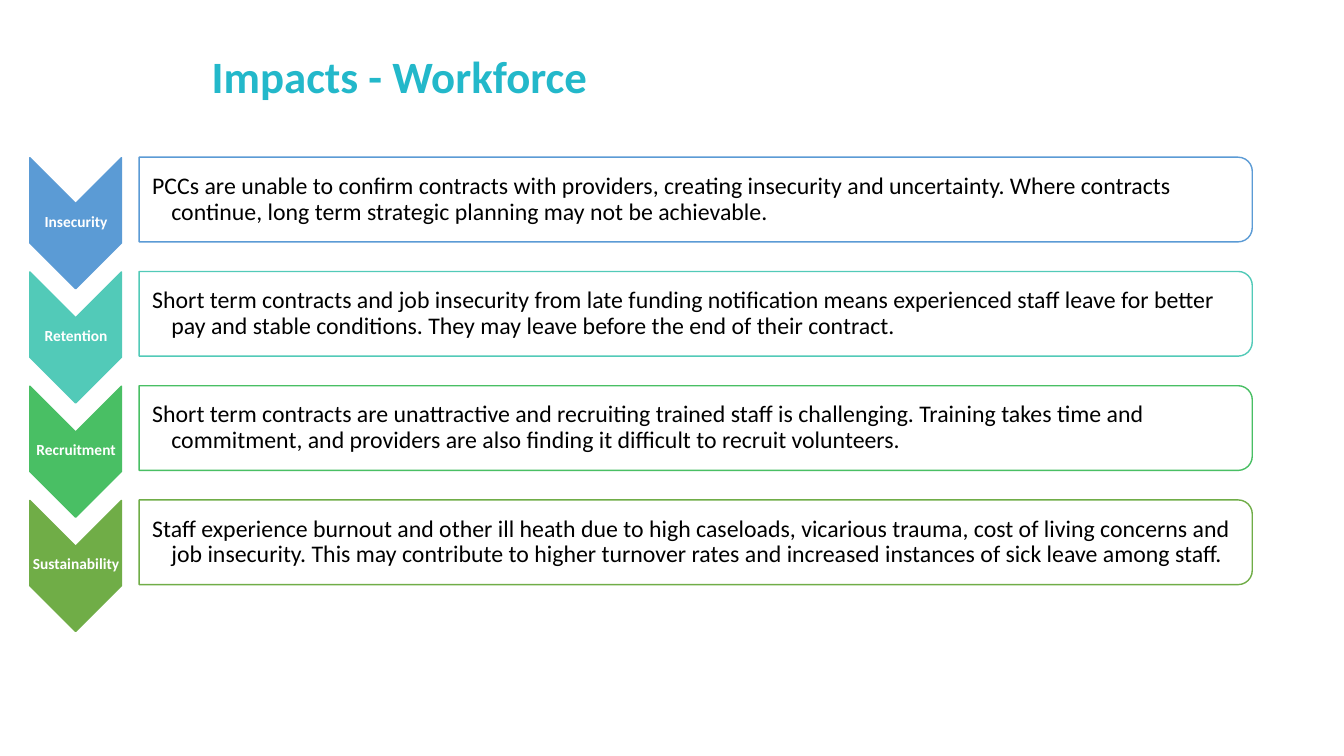
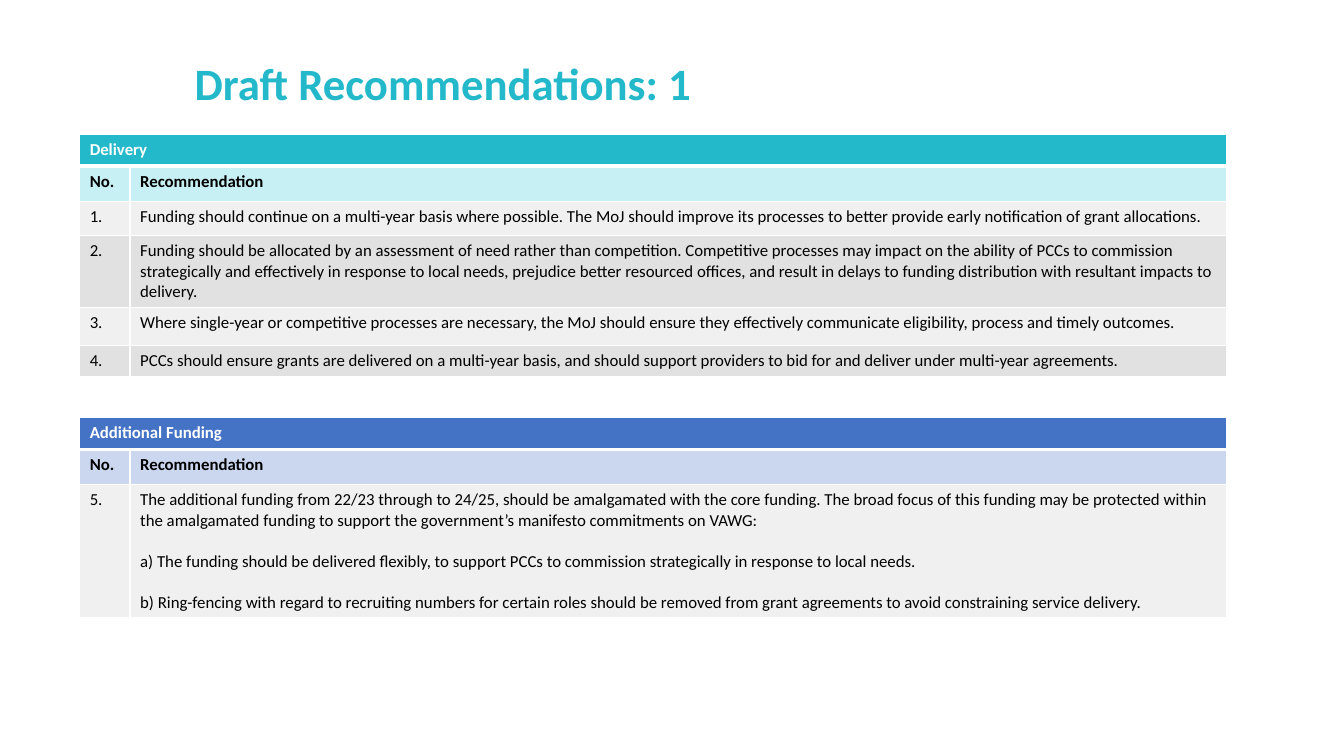
from lxml.etree import SubElement
from pptx import Presentation
from pptx.dml.color import RGBColor
from pptx.enum.shapes import MSO_SHAPE as SHAPE
from pptx.enum.text import MSO_ANCHOR as ANCHOR, PP_ALIGN as ALIGN
from pptx.oxml.ns import qn
from pptx.util import Inches, Pt

COLORS = {
    "teal": "23B8CA", "pale_teal": "C7F0F5",
    "blue": "4472C4", "pale_blue": "CAD7EE",
    "light_gray": "F0F0F0", "gray": "E1E1E1",
    "white": "FFFFFF", "black": "000000",
    "sky": "5B9BD5", "aqua": "52CAB8", "green": "49BF64", "olive": "70AD47",
}
IMPACTS = [
    ("Insecurity", "sky", "PCCs are unable to confirm contracts with providers, creating insecurity and uncertainty. Where contracts continue, long term strategic planning may not be achievable."),
    ("Retention", "aqua", "Short term contracts and job insecurity from late funding notification means experienced staff leave for better pay and stable conditions. They may leave before the end of their contract."),
    ("Recruitment", "green", "Short term contracts are unattractive and recruiting trained staff is challenging. Training takes time and commitment, and providers are also finding it difficult to recruit volunteers."),
    ("Sustainability", "olive", "Staff experience burnout and other ill heath due to high caseloads, vicarious trauma, cost of living concerns and job insecurity. This may contribute to higher turnover rates and increased instances of sick leave among staff."),
]
TABLES = [
    ("Delivery", 1.33, "teal", "pale_teal", [0.32, 0.35, 0.34, 0.71, 0.38, 0.3], [
        ("1.", "Funding should continue on a multi-year basis where possible. The MoJ should improve its processes to better provide early notification of grant allocations."),
        ("2.", "Funding should be allocated by an assessment of need rather than competition. Competitive processes may impact on the ability of PCCs to commission strategically and effectively in response to local needs, prejudice better resourced offices, and result in delays to funding distribution with resultant impacts to delivery."),
        ("3.", "Where single-year or competitive processes are necessary, the MoJ should ensure they effectively communicate eligibility, process and timely outcomes."),
        ("4.", "PCCs should ensure grants are delivered on a multi-year basis, and should support providers to bid for and deliver under multi-year agreements."),
    ]),
    ("Additional Funding", 4.14, "blue", "pale_blue", [0.32, 0.35, 1.3], [
        ("5.", "The additional funding from 22/23 through to 24/25, should be amalgamated with the core funding. The broad focus of this funding may be protected within the amalgamated funding to support the government’s manifesto commitments on VAWG:\n"
               "a) The funding should be delivered flexibly, to support PCCs to commission strategically in response to local needs.\n"
               "b) Ring-fencing with regard to recruiting numbers for certain roles should be removed from grant agreements to avoid constraining service delivery."),
    ]),
]


def color(name):
    return RGBColor.from_string(COLORS[name])


def style(paragraph, size, color_name, bold=False):
    paragraph.font.name = "Calibri"
    paragraph.font.size = Pt(size)
    paragraph.font.bold = bold
    paragraph.font.color.rgb = color(color_name)


presentation = Presentation()
presentation.slide_width = Inches(13.33)
presentation.slide_height = Inches(7.5)
slides = []
for text, left, top in [("Impacts - Workforce", 2, 0.32), ("Draft Recommendations: 1", 1.83, 0.39)]:
    slide = presentation.slides.add_slide(presentation.slide_layouts[5])
    title = slide.shapes.title
    title.left, title.top, title.width, title.height = map(Inches, (left, top, 11.5, 0.92))
    title.text_frame.text = text
    title.text_frame.vertical_anchor = ANCHOR.MIDDLE
    paragraph = title.text_frame.paragraphs[0]
    paragraph.alignment = ALIGN.LEFT
    paragraph.line_spacing = 0.9
    style(paragraph, 32, "teal", True)
    slides.append(slide)
impact_slide, recommendation_slide = slides

pitch = 3.4 / 3
for index, (label, accent, description) in enumerate(IMPACTS):
    offset = index * pitch
    for kind, left, top, width, height, fill in [
        (SHAPE.CHEVRON, 0.1, 1.76, 1.3, 0.91, accent),
        (SHAPE.ROUND_2_SAME_RECTANGLE, 6.48, -3.54, 0.84, 11.04, "white"),
    ]:
        shape = impact_slide.shapes.add_shape(kind, *map(Inches, (left, top + offset, width, height)))
        shape.rotation = 90
        shape.shadow.inherit = False
        shape.fill.solid()
        shape.fill.fore_color.rgb = color(fill)
        shape.line.color.rgb = color(accent)
        shape.line.width = Pt(1)

    for text, left, top, width, height, inset, size, text_color in [
        (label, 0.3, 2.01, 0.91, 0.39, 0.01, 11, "white"),
        (description, 1.38, 1.6, 11, 0.76, 0.13, 17, "black"),
    ]:
        box = impact_slide.shapes.add_textbox(*map(Inches, (left, top + offset, width, height)))
        frame = box.text_frame
        frame.word_wrap = True
        frame.vertical_anchor = ANCHOR.MIDDLE
        frame.margin_left = Inches(inset)
        frame.margin_top = frame.margin_right = frame.margin_bottom = Inches(0.01)
        frame.text = text
        paragraph = frame.paragraphs[0]
        paragraph.line_spacing = 0.9
        if text == label:
            paragraph.alignment = ALIGN.CENTER
        else:
            properties = paragraph._p.get_or_add_pPr()
            properties.set("marL", str(Inches(0.19)))
            properties.set("indent", str(-Inches(0.19)))
        style(paragraph, size, text_color, text == label)

for heading, top, head_fill, subhead_fill, heights, recommendations in TABLES:
    rows = [(heading, ""), ("No.", "Recommendation")] + recommendations
    frame = recommendation_slide.shapes.add_table(
        len(rows), 2, *map(Inches, (0.79, top, 11.38, sum(heights))))
    table = frame.table
    table.first_row = table.horz_banding = False
    table.columns[0].width = Inches(0.5)
    table.columns[1].width = Inches(10.88)
    table.cell(0, 0).merge(table.cell(0, 1))
    fills = [head_fill, subhead_fill] + ["light_gray", "gray"] * 2
    for row, texts in enumerate(rows):
        table.rows[row].height = Inches(heights[row])
        for column, text in enumerate(texts):
            cell = table.cell(row, column)
            properties = cell._tc.get_or_add_tcPr()
            for side in ("L", "R", "T", "B"):
                thick = (row, side) in [(0, "B"), (1, "T")]
                border = SubElement(properties, qn(f"a:ln{side}"), w=str(Pt(3 if thick else 1)))
                SubElement(SubElement(border, qn("a:solidFill")), qn("a:srgbClr"), val=COLORS["white"])
            cell.fill.solid()
            cell.fill.fore_color.rgb = color(fills[row])
            if not text:
                continue
            cell.text_frame.text = text
            for number, paragraph in enumerate(cell.text_frame.paragraphs):
                if number:
                    paragraph.space_before = Pt(14.6)
                style(paragraph, 12, "white" if row == 0 else "black", row < 2)

presentation.save("out.pptx")
